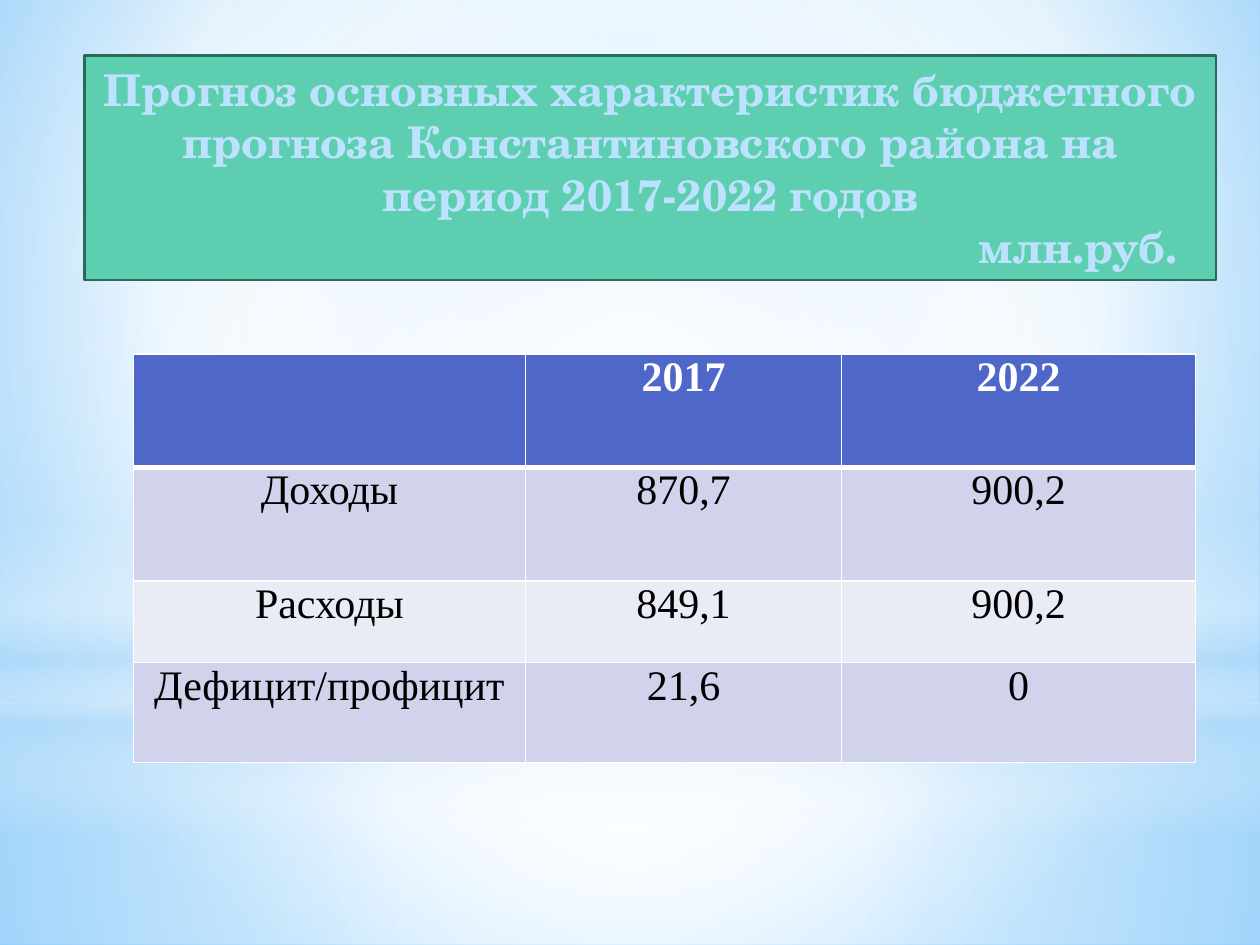
from dataclasses import dataclass

from lxml import etree
from pptx import Presentation
from pptx.dml.color import RGBColor
from pptx.enum.shapes import MSO_SHAPE
from pptx.enum.text import MSO_ANCHOR, PP_ALIGN
from pptx.oxml.ns import qn
from pptx.util import Inches, Pt

RECT, OVAL = MSO_SHAPE.RECTANGLE, MSO_SHAPE.OVAL
CENTER, LEFT = PP_ALIGN.CENTER, PP_ALIGN.LEFT
MIDDLE = MSO_ANCHOR.MIDDLE
WHITE, SKY, BLACK = "FFFFFF", "B4DCFA", "000000"
SERIF, SCHOOL = "Times New Roman", "TeX Gyre Schola"


@dataclass
class Stop:
    pos: int
    color: str
    alpha: int = 100


@dataclass
class Glow:
    kind: MSO_SHAPE
    top: float
    high: float
    stops: list[Stop]
    focus: tuple | None = (50, 50, 50, 50)


@dataclass
class Row:
    high: float
    fill: str
    texts: tuple
    head: bool = False


GLOWS = [
    Glow(RECT, 5.58, 1.92, [Stop(0, WHITE, 91), Stop(37, WHITE, 76), Stop(100, SKY, 79)]),
    Glow(RECT, 0, 5.58, [Stop(0, WHITE, 89), Stop(48, WHITE, 62), Stop(100, SKY, 79)]),
    Glow(RECT, 4.12, 2.5, [Stop(0, WHITE, 0), Stop(29, WHITE, 30), Stop(45, SKY, 40),
                           Stop(55, WHITE, 26), Stop(65, SKY, 60), Stop(100, WHITE, 0)], None),
    Glow(OVAL, 1.75, 5.58, [Stop(0, WHITE), Stop(56, WHITE, 0)]),
]
COLS = (3.11, 2.51, 2.81)
ROWS = [
    Row(0.9, "4E67C8", ("", "2017", "2022"), True),
    Row(0.9, "D0D3EB", ("Доходы", "870,7", "900,2")),
    Row(0.65, "E9EBF5", ("Расходы", "849,1", "900,2")),
    Row(0.79, "D0D3EB", ("Дефицит/профицит", "21,6", "0")),
]
TITLE = ("Прогноз основных характеристик бюджетного прогноза "
         "Константиновского района на период 2017-2022 годов")


def rgb(code: str) -> RGBColor:
    return RGBColor.from_string(code)


def node(root, tag: str, **attrs):
    return etree.SubElement(root, qn(tag), {k: str(v) for k, v in attrs.items()})


def blend(owner, root, stops: list[Stop], focus: tuple | None) -> None:
    owner.fill.gradient()
    grad = root.find(".//" + qn("a:gradFill"))
    for child in list(grad):
        grad.remove(child)
    group = node(grad, "a:gsLst")
    for stop in stops:
        item = node(group, "a:gs", pos=stop.pos * 1000)
        color = node(item, "a:srgbClr", val=stop.color)
        if stop.alpha < 100:
            node(color, "a:alpha", val=stop.alpha * 1000)
    if focus:
        path = node(grad, "a:path", path="circle")
        node(path, "a:fillToRect", **{k: v * 1000 for k, v in zip("ltrb", focus)})
    else:
        node(grad, "a:lin", ang=90 * 60000, scaled=0)


def stroke(root, tag: str, spot: int, color: str, width: float) -> None:
    line = node(root, tag, w=Pt(width))
    node(node(line, "a:solidFill"), "a:srgbClr", val=color)
    root.insert(spot, line)


def write(para, text: str, font: str, size: int, color: str, bold: bool):
    run = para.add_run()
    run.text = text
    run.font.name, run.font.size, run.font.bold = font, Pt(size), bold
    run.font.color.rgb = rgb(color)
    return run


def shine(slide, glow: Glow) -> None:
    shape = slide.shapes.add_shape(glow.kind, 0, Inches(glow.top), Inches(10), Inches(glow.high))
    shape.shadow.inherit = False
    shape.line.fill.background()
    blend(shape, shape.element.spPr, glow.stops, glow.focus)


def fill_cell(cell, text: str, row: Row, index: int) -> None:
    cell.fill.solid()
    cell.fill.fore_color.rgb = rgb(row.fill)
    cell.margin_left = cell.margin_right = Inches(0.07)
    cell.margin_top = cell.margin_bottom = 0
    props = cell._tc.get_or_add_tcPr()
    heavy = {"T": index == 1, "B": index == 0}
    for spot, side in enumerate("LRTB"):
        stroke(props, "a:ln" + side, spot, WHITE, 3 if heavy.get(side) else 1)
    if text:
        para = cell.text_frame.paragraphs[0]
        para.alignment = CENTER
        write(para, text, SERIF, 24, WHITE if row.head else BLACK, row.head)


def add_grid(slide) -> None:
    wide, high = sum(COLS), sum(row.high for row in ROWS)
    frame = slide.shapes.add_table(len(ROWS), len(COLS), Inches(1.06), Inches(2.81),
                                   Inches(wide), Inches(high))
    table = frame.table
    table.horz_banding = False
    for col, size in zip(table.columns, COLS):
        col.width = Inches(size)
    for index, row in enumerate(ROWS):
        table.rows[index].height = Inches(row.high)
        for cell, text in zip(table.rows[index].cells, row.texts):
            fill_cell(cell, text, row, index)


def add_title(slide) -> None:
    box = slide.shapes.add_shape(RECT, Inches(0.67), Inches(0.44), Inches(8.98), Inches(1.78))
    box.shadow.inherit = False
    box.fill.solid()
    box.fill.fore_color.rgb = rgb("5DCEAF")
    box.line.color.rgb = rgb("276B58")
    box.line.width = Pt(1.25)
    frame = box.text_frame
    frame.word_wrap, frame.vertical_anchor = True, MIDDLE
    head, unit = frame.paragraphs[0], frame.add_paragraph()
    head.alignment, unit.alignment = CENTER, LEFT
    unit._p.get_or_add_pPr().set("marL", str(Inches(7)))
    for para, text in ((head, TITLE), (unit, "млн.руб.")):
        run = write(para, text, SCHOOL, 25, "BDE2FF", True)
        stroke(run._r.get_or_add_rPr(), "a:ln", 0, "17204F", 1)


def main() -> None:
    deck = Presentation()
    deck.slide_width, deck.slide_height = Inches(10), Inches(7.5)
    slide = deck.slides.add_slide(deck.slide_layouts[6])
    blend(slide.background, slide.element,
          [Stop(0, "9ED5FF"), Stop(60, WHITE), Stop(100, "5BB9FF")], (20, 10, 20, 60))
    for glow in GLOWS:
        shine(slide, glow)
    add_grid(slide)
    add_title(slide)
    deck.save("out.pptx")


if __name__ == "__main__":
    main()
